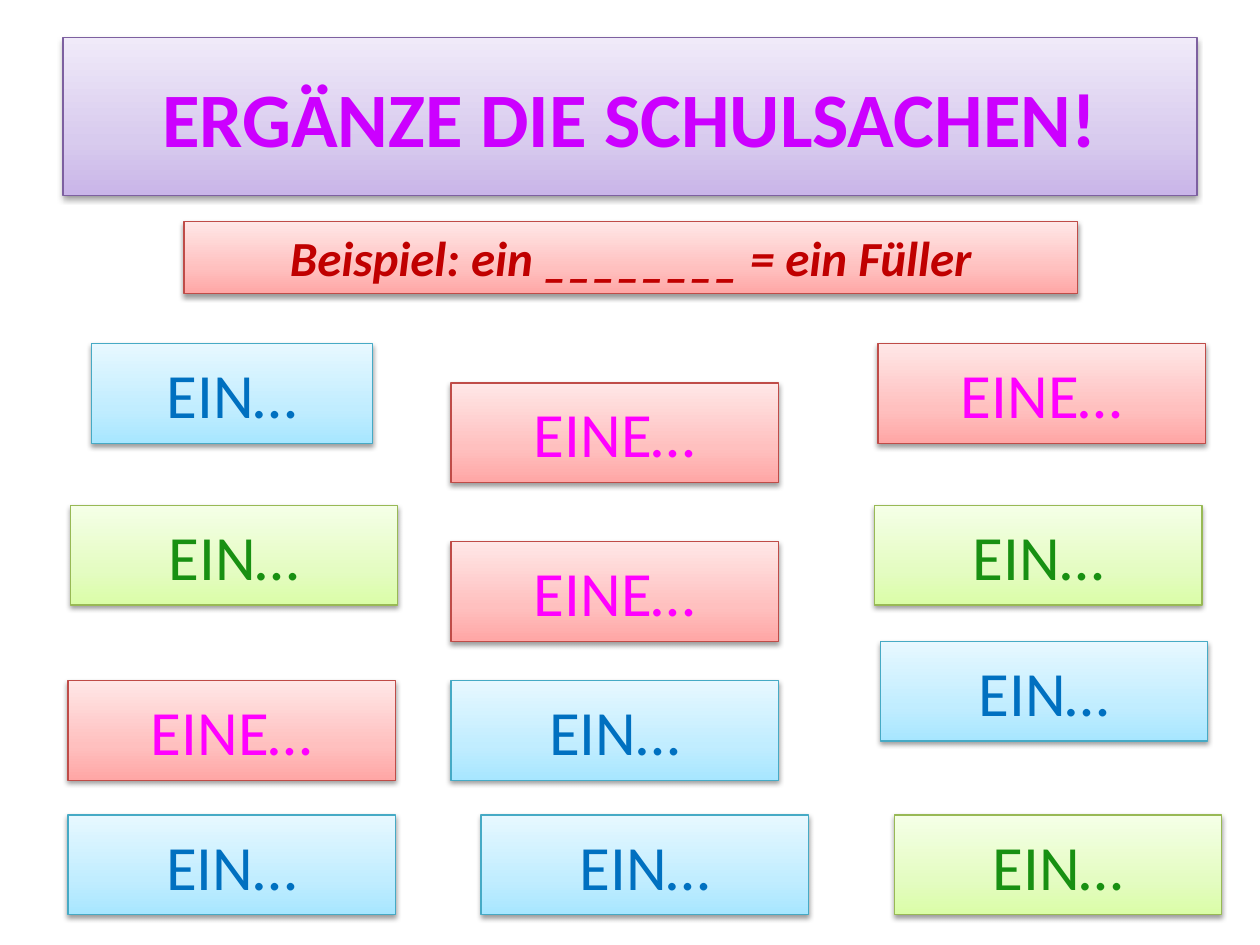
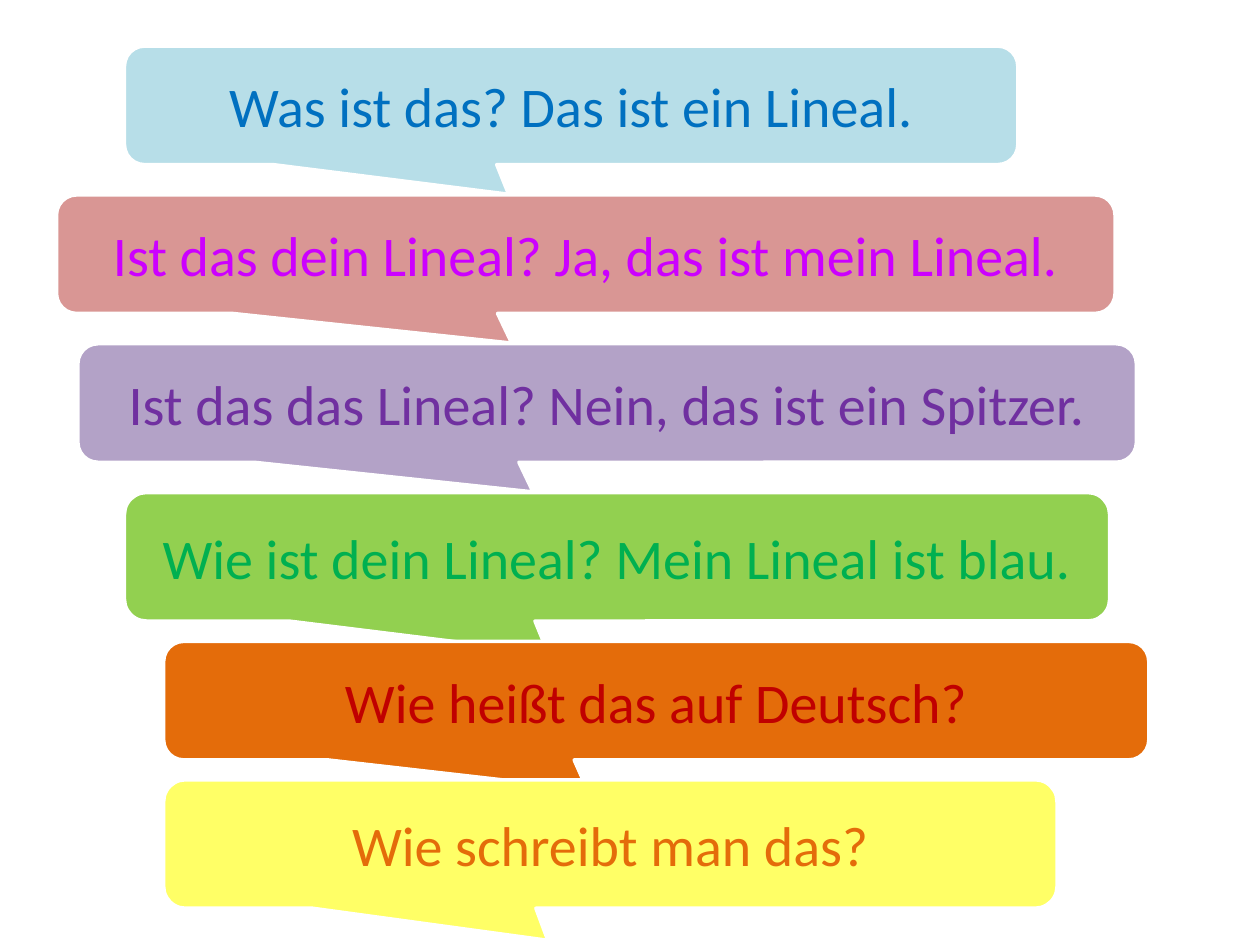
"""Build two German classroom slides about school supplies."""
import copy

import pptx
import pptx.dml.color
import pptx.enum.shapes
import pptx.enum.text
import pptx.oxml
import pptx.oxml.ns
import pptx.util
from lxml import etree

Cm = pptx.util.Cm
Pt = pptx.util.Pt
SHAPES = pptx.enum.shapes.MSO_SHAPE
ANCHOR = pptx.enum.text.MSO_ANCHOR
FONT = "Calibri"

COLORS = {
    "white": "FFFFFF", "black": "000000", "violet": "CC00FF", "pink": "FF00FF",
    "blue": "0070C0", "leaf": "189012", "green": "00B050", "dark red": "C00000",
    "purple": "7030A0", "orange": "E46C0A", "sky": "B7DEE8", "rose": "D99694",
    "lilac": "B3A2C7", "lime": "92D050", "yellow": "FFFF66",
}
CARD_STYLES = {
    "lilac": {"stops": ("C9B5E8", "D8CBEE", "F0EAF9"), "line": "7D60A0"},
    "red": {"stops": ("FFA6A5", "FFC0BF", "FFE7E7"), "line": "BF4C48"},
    "blue": {"stops": ("A7E6FF", "C1EDFF", "E7F8FF"), "line": "46AAC5"},
    "green": {"stops": ("DAFDA7", "E4FCC2", "F5FFE7"), "line": "98B955"},
}
STOP_POSITIONS = (0, 0.35, 1)

TITLE = ("ERGÄNZE DIE SCHULSACHEN!", (1.27, 0.76, 22.86, 3.18))
EXAMPLE = ("Beispiel: ein ________ = ein Füller", (3.71, 4.47, 18.01, 1.45))

ARTICLES = {
    "red": ("EINE…", "pink"),
    "blue": ("EIN…", "blue"),
    "green": ("EIN…", "leaf"),
}
CARD_WIDTH, CARD_HEIGHT = 6.6, 2.01
CARDS = [
    ("blue", 1.85, 6.93, 5.66),
    ("red", 9.09, 7.72, CARD_WIDTH),
    ("red", 17.7, 6.93, CARD_WIDTH),
    ("green", 1.42, 10.19, CARD_WIDTH),
    ("red", 9.09, 10.92, CARD_WIDTH),
    ("red", 1.37, 13.72, CARD_WIDTH),
    ("blue", 9.09, 13.72, CARD_WIDTH),
    ("green", 17.63, 10.19, CARD_WIDTH),
    ("blue", 17.75, 12.93, CARD_WIDTH),
    ("blue", 9.7, 16.43, CARD_WIDTH),
    ("green", 18.03, 16.43, CARD_WIDTH),
    ("blue", 1.37, 16.43, CARD_WIDTH),
]

BUBBLE_TAIL = (-0.07, 0.75, 0.17)
BUBBLES = [
    ("Was ist das? Das ist ein Lineal.", "sky", "blue", (2.51, 0.93, 18.01, 2.39)),
    ("Ist das dein Lineal? Ja, das ist mein Lineal.", "rose", "violet", (1.14, 3.93, 21.34, 2.39)),
    ("Wie ist dein Lineal? Mein Lineal ist blau.", "lime", "green", (2.51, 9.93, 19.86, 2.59)),
    ("Wie heißt das auf Deutsch?", "orange", "dark red", (3.3, 12.93, 19.86, 2.39)),
    ("Wie schreibt man das?", "yellow", "orange", (3.3, 15.72, 18.01, 2.59)),
    ("Ist das das Lineal? Nein, das ist ein Spitzer.", "lilac", "purple", (1.57, 6.93, 21.34, 2.39)),
]


def rgb(value):
    return pptx.dml.color.RGBColor.from_string(value)


def write_text(shape, text, *, size, color, bold=False, italic=False, anchor=ANCHOR.MIDDLE):
    frame = shape.text_frame
    frame.word_wrap = True
    frame.vertical_anchor = anchor
    paragraph = frame.paragraphs[0]
    paragraph.alignment = pptx.enum.text.PP_ALIGN.CENTER
    run = paragraph.add_run()
    run.text = text
    run.font.name = FONT
    run.font.size = Pt(size)
    run.font.bold = bold
    run.font.italic = italic
    run.font.color.rgb = rgb(COLORS[color])


def add_box(slide, kind, box, line, width):
    shape = slide.shapes.add_shape(kind, *(Cm(length) for length in box))
    shape.line.color.rgb = rgb(line)
    shape.line.width = Pt(width)
    shape.shadow.inherit = False
    return shape


def fill_gradient(shape, colors):
    shape.fill.gradient()
    shape.fill.gradient_angle = 90
    stop_list = shape._element.spPr.find(".//" + pptx.oxml.ns.qn("a:gsLst"))
    stop_list.append(copy.deepcopy(stop_list[-1]))
    for stop, position, color in zip(shape.fill.gradient_stops, STOP_POSITIONS, colors):
        stop.position = position
        stop.color.rgb = rgb(color)


def add_shadow(shape):
    qn = pptx.oxml.ns.qn
    effects = shape._element.spPr.find(qn("a:effectLst"))
    shadow = etree.SubElement(effects, qn("a:outerShdw"), blurRad=str(Pt(3.1)),
                              dist=str(Pt(1.6)), dir="5400000", rotWithShape="0")
    color = etree.SubElement(shadow, qn("a:srgbClr"), val=COLORS["black"])
    etree.SubElement(color, qn("a:alpha"), val="38000")


def add_card(slide, text, box, style, **text_format):
    colors = CARD_STYLES[style]
    shape = add_box(slide, SHAPES.RECTANGLE, box, colors["line"], 0.75)
    fill_gradient(shape, colors["stops"])
    add_shadow(shape)
    write_text(shape, text, **text_format)


def add_bubble(slide, text, fill, color, box):
    shape = add_box(slide, SHAPES.ROUNDED_RECTANGULAR_CALLOUT, box, COLORS["white"], 2)
    for index, value in enumerate(BUBBLE_TAIL):
        shape.adjustments[index] = value
    shape.fill.solid()
    shape.fill.fore_color.rgb = rgb(COLORS[fill])
    write_text(shape, text, size=32, color=color)


def build_article_slide(slide):
    add_card(slide, *TITLE, "lilac", size=44, color="violet", bold=True)
    add_card(slide, *EXAMPLE, "red", size=28, color="dark red",
             bold=True, italic=True, anchor=ANCHOR.TOP)
    for style, left, top, width in CARDS:
        text, color = ARTICLES[style]
        add_card(slide, text, (left, top, width, CARD_HEIGHT), style, size=36, color=color)


def build_question_slide(slide):
    for bubble in BUBBLES:
        add_bubble(slide, *bubble)


def main():
    presentation = pptx.Presentation()
    presentation.slide_width = Cm(25.4)
    presentation.slide_height = Cm(19.05)
    for build in (build_article_slide, build_question_slide):
        build(presentation.slides.add_slide(presentation.slide_layouts[6]))
    presentation.save("out.pptx")


if __name__ == "__main__":
    main()
